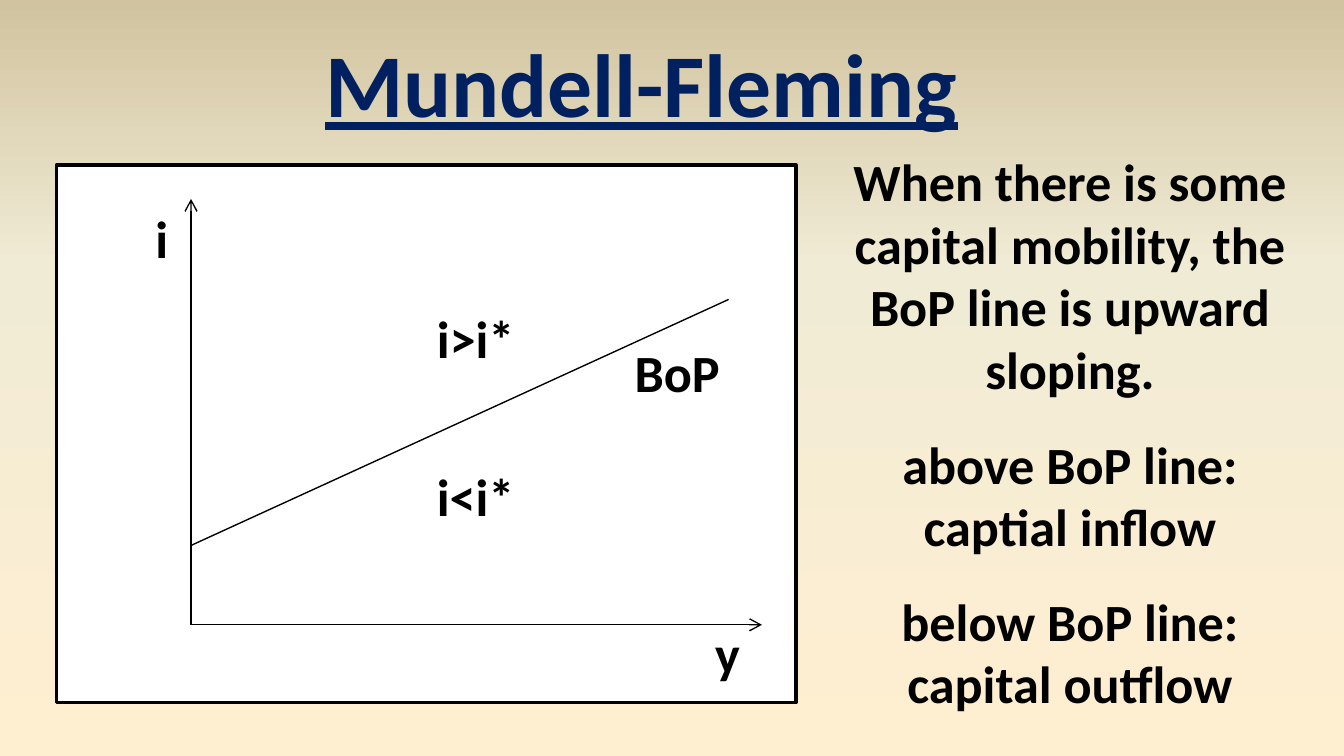
import copy

import lxml.etree
import pptx
import pptx.dml.color
import pptx.enum.shapes
import pptx.enum.text
import pptx.oxml.ns
import pptx.util

Cm = pptx.util.Cm
Pt = pptx.util.Pt
RGBColor = pptx.dml.color.RGBColor
qn = pptx.oxml.ns.qn

NAVY = RGBColor(0x00, 0x20, 0x60)
BLACK = RGBColor(0x00, 0x00, 0x00)
WHITE = RGBColor(0xFF, 0xFF, 0xFF)
BACKGROUND_STOPS = [
    (0, RGBColor(0xFF, 0xEF, 0xD1)),
    (0.65, RGBColor(0xF0, 0xEB, 0xD5)),
    (1, RGBColor(0xD1, 0xC3, 0x9F)),
]
FONT = "Calibri"

TITLE = "Mundell-Fleming"
TITLE_BOX = (5.84, 0.38, 12.57, 2.31)
EXPLANATION = [
    ["When there is some capital mobility, the BoP line is upward sloping."],
    ["above BoP line:", "captial inflow"],
    ["below BoP line:", "capital outflow"],
]
EXPLANATION_BOX = (15.04, 2.69, 10.36, 11.02)
GROUP_GAP = 17

FRAME = (1.07, 3.12, 13.97, 10.16)
ORIGIN = (3.61, 11.81)
LINES = [
    (ORIGIN, (ORIGIN[0], 3.76), True),
    (ORIGIN, (14.4, ORIGIN[1]), True),
    ((13.77, 5.66), (ORIGIN[0], 10.31), False),
]
LABEL_HEIGHT = 1.45
LABELS = [
    ("i", 2.11, 3.78, 1.9),
    ("y", 12.9, 11.61, 1.7),
    ("BoP", 11.63, 6.3, 2.34),
    ("i>i*", 7.82, 5.66, 2.34),
    ("i<i*", 7.82, 8.66, 2.34),
]


def place(shape, box):
    shape.left, shape.top, shape.width, shape.height = map(Cm, box)


def format_text(text_frame, size, color, underline=False):
    for paragraph in text_frame.paragraphs:
        paragraph.alignment = pptx.enum.text.PP_ALIGN.CENTER
        for run in paragraph.runs:
            run.font.name = FONT
            run.font.size = Pt(size)
            run.font.bold = True
            run.font.underline = underline
            run.font.color.rgb = color


def paint_background(slide):
    fill = slide.background.fill
    fill.gradient()
    fill.gradient_angle = 90
    stop_list = slide.element.find(".//" + qn("a:gsLst"))
    stop_list.append(copy.deepcopy(stop_list[0]))
    for stop, (position, color) in zip(fill.gradient_stops, BACKGROUND_STOPS):
        stop.position = position
        stop.color.rgb = color


def add_title(slide):
    title = slide.shapes.title
    place(title, TITLE_BOX)
    title.text_frame.text = TITLE
    title.text_frame.word_wrap = False
    title.text_frame.auto_size = pptx.enum.text.MSO_AUTO_SIZE.NONE
    format_text(title.text_frame, 48, NAVY, underline=True)


def add_explanation(slide):
    body = slide.placeholders[1]
    place(body, EXPLANATION_BOX)
    text_frame = body.text_frame
    text_frame.text = "\n".join(line for group in EXPLANATION for line in group)
    text_frame.auto_size = pptx.enum.text.MSO_AUTO_SIZE.NONE
    format_text(text_frame, 28, BLACK)
    gaps = [
        GROUP_GAP if group_index and not line_index else 0
        for group_index, group in enumerate(EXPLANATION)
        for line_index in range(len(group))
    ]
    for paragraph, gap in zip(text_frame.paragraphs, gaps):
        paragraph.space_before = Pt(gap)
        properties = paragraph._p.get_or_add_pPr()
        properties.set("marL", "0")
        properties.set("indent", "0")
        lxml.etree.SubElement(properties, qn("a:buNone"))


def add_line(shapes, start, end, has_arrow):
    connector = shapes.add_connector(
        pptx.enum.shapes.MSO_CONNECTOR.STRAIGHT, *map(Cm, start + end)
    )
    connector.line.color.rgb = BLACK
    connector.line.width = Pt(0.75)
    properties = connector.element.spPr
    if has_arrow:
        outline = properties.find(qn("a:ln"))
        lxml.etree.SubElement(outline, qn("a:tailEnd"), type="arrow")
    lxml.etree.SubElement(properties, qn("a:effectLst"))


def add_diagram(slide):
    shapes = slide.shapes.add_group_shape().shapes
    frame = shapes.add_shape(
        pptx.enum.shapes.MSO_SHAPE.RECTANGLE, *map(Cm, FRAME)
    )
    frame.shadow.inherit = False
    frame.fill.solid()
    frame.fill.fore_color.rgb = WHITE
    frame.line.color.rgb = BLACK
    frame.line.width = Pt(2)
    for start, end, has_arrow in LINES:
        add_line(shapes, start, end, has_arrow)
    for text, left, top, width in LABELS:
        label = shapes.add_textbox(*map(Cm, (left, top, width, LABEL_HEIGHT)))
        label.text_frame.word_wrap = True
        label.text_frame.text = text
        format_text(label.text_frame, 28, BLACK)


def main():
    presentation = pptx.Presentation()
    presentation.slide_width = Cm(25.4)
    presentation.slide_height = Cm(14.29)
    slide = presentation.slides.add_slide(presentation.slide_layouts[1])
    paint_background(slide)
    add_title(slide)
    add_explanation(slide)
    add_diagram(slide)
    presentation.save("out.pptx")


if __name__ == "__main__":
    main()
